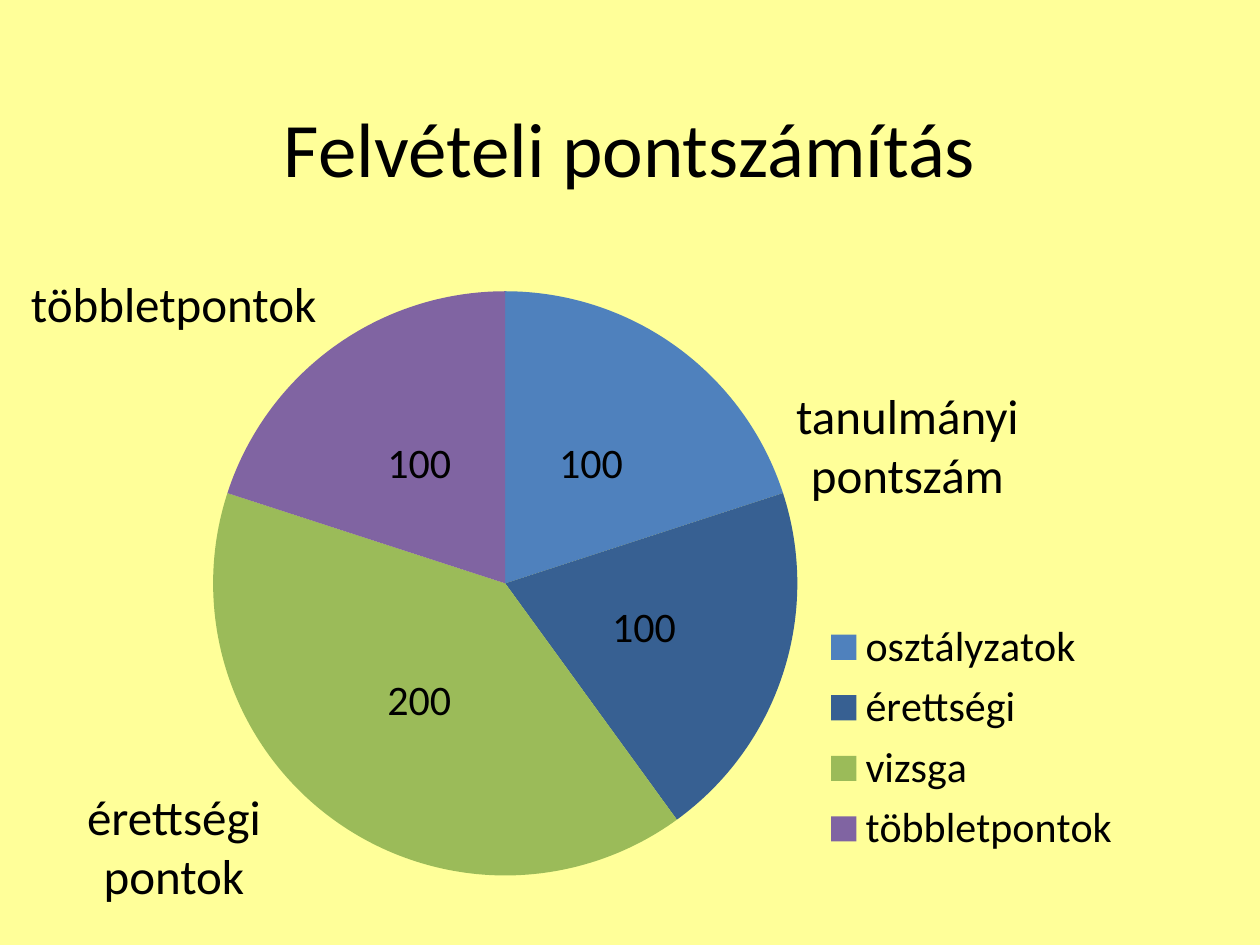
from lxml import etree
from pptx import Presentation
from pptx import util as u
from pptx.chart.data import CategoryChartData
from pptx.dml.color import RGBColor
from pptx.enum import chart as charts, text
from pptx.oxml.ns import qn

FONT = "Calibri"
BLACK = "000000"
SLICES = [
    ("osztályzatok", 100, "4F81BD"),
    ("érettségi", 100, "376092"),
    ("vizsga", 200, "9BBB59"),
    ("többletpontok", 100, "8064A2"),
]
CALLOUTS = [
    ("tanulmányi pontszám", (433.5, 216.75, 170, 75)),
    ("érettségi pontok", (14.4, 445.75, 170, 75)),
    ("többletpontok", (5.75, 152.75, 187, 41)),
]


def paint(target, color):
    """Give a fill one solid colour."""
    target.solid()
    target.fore_color.rgb = RGBColor.from_string(color)


def style(font, size):
    """Set the typeface, size and colour of a font."""
    font.name = FONT
    font.size = u.Pt(size)
    font.color.rgb = RGBColor.from_string(BLACK)


def add_text(page, box, words, size, anchor=text.MSO_ANCHOR.TOP):
    """Add centred, wrapped text in a box."""
    frame = page.shapes.add_textbox(*map(u.Pt, box)).text_frame
    frame.word_wrap = True
    frame.vertical_anchor = anchor
    para = frame.paragraphs[0]
    para.alignment = text.PP_ALIGN.CENTER
    span = para.add_run()
    span.text = words
    style(span.font, size)


def set_layout(element, index, bounds, inner=False):
    """Fix a chart part at x, y, w, h, as fractions of the chart."""
    for old in element.findall(qn("c:layout")):
        element.remove(old)
    layout = etree.Element(qn("c:layout"))
    manual = etree.SubElement(layout, qn("c:manualLayout"))
    settings = [("layoutTarget", "inner")] if inner else []
    settings += [("xMode", "edge"), ("yMode", "edge")]
    settings += zip("xywh", bounds)
    for name, value in settings:
        etree.SubElement(manual, qn(f"c:{name}")).set("val", str(value))
    element.insert(index, layout)


def add_pie(page, box):
    """Add the pie of points with its value labels and legend."""
    names, values, colors = zip(*SLICES)
    data = CategoryChartData()
    data.categories = names
    data.add_series("Series 1", values)
    chart = page.shapes.add_chart(
        charts.XL_CHART_TYPE.PIE, *map(u.Pt, box), data).chart
    style(chart.font, 10)
    chart.has_title = False
    plot = chart.plots[0]
    plot.vary_by_categories = True
    for index, color in enumerate(colors):
        paint(plot.series[0].points[index].format.fill, color)
    labels = plot.series[0].data_labels
    labels.show_value = True
    labels.position = charts.XL_LABEL_POSITION.CENTER
    style(labels.font, 24)
    chart.has_legend = True
    legend = chart.legend
    legend.position = charts.XL_LEGEND_POSITION.RIGHT
    legend.include_in_layout = False
    style(legend.font, 24)
    area = chart.element.find(".//" + qn("c:plotArea"))
    set_layout(area, 0, (0.02, 0.04, 0.62, 0.91), inner=True)
    set_layout(chart.element.find(".//" + qn("c:legend")), 1,
               (0.67, 0.54, 0.31, 0.39))


def build_page(page, box):
    """Place the title, pie and callouts in the page box."""
    left, top, width, height = box
    paint(page.background.fill, "FFFF99")
    add_text(page, (left + 54, top + 26, width - 108, 116),
             "Felvételi pontszámítás", 44, text.MSO_ANCHOR.MIDDLE)
    add_pie(page, (left + 111, top + 151, 538.5, 368.5))
    for words, (x, y, wide, high) in CALLOUTS:
        add_text(page, (left + x, top + y, wide, high), words, 28)


def main():
    """Build and save the deck."""
    deck = Presentation()
    deck.slide_width, deck.slide_height = u.Pt(720), u.Pt(540)
    page = deck.slides.add_slide(deck.slide_layouts[6])
    build_page(page, (0, 0, 720, 540))
    deck.save("out.pptx")


if __name__ == "__main__":
    main()
